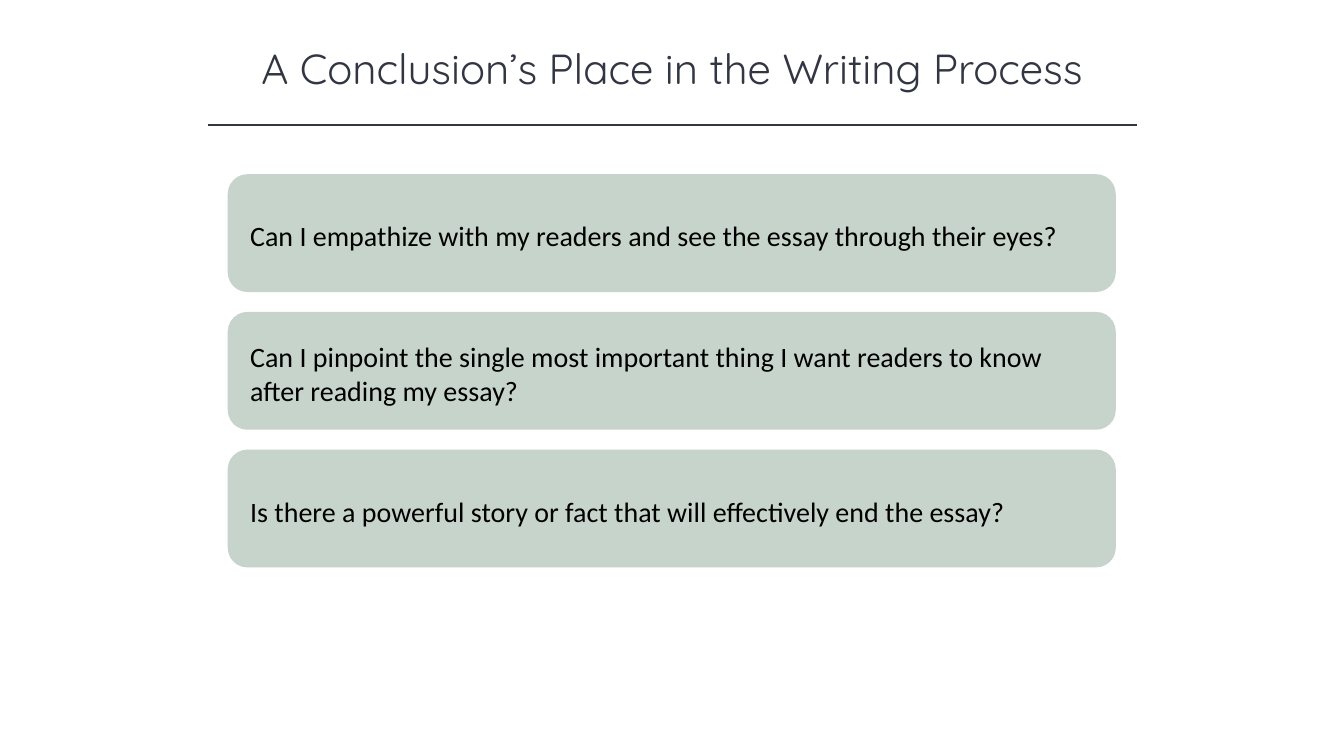
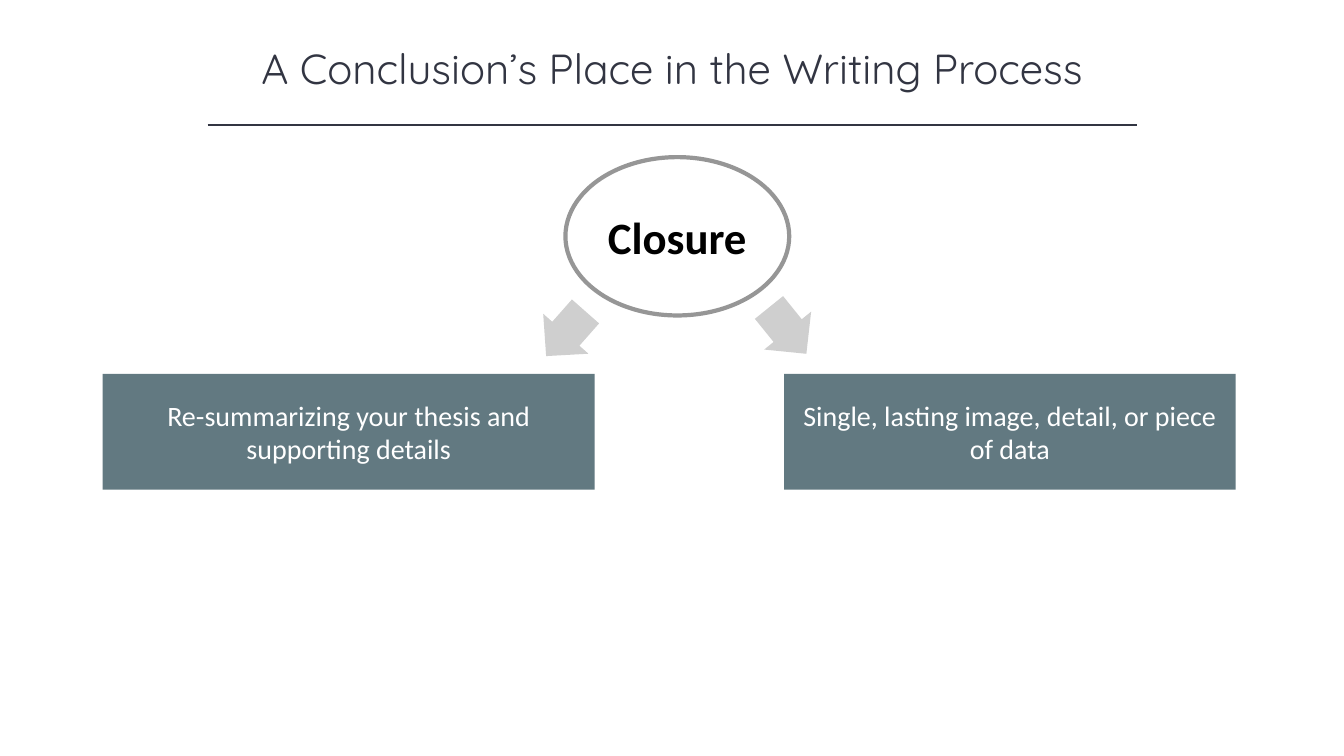
from dataclasses import dataclass

from lxml import etree
from pptx import Presentation
from pptx.dml.color import RGBColor
from pptx.enum.shapes import MSO_CONNECTOR, MSO_SHAPE
from pptx.enum.text import MSO_ANCHOR, PP_ALIGN
from pptx.oxml.ns import qn
from pptx.shapes.autoshape import Shape
from pptx.slide import Slide
from pptx.util import Cm, Pt

LINE = MSO_CONNECTOR.STRAIGHT
RECT = MSO_SHAPE.RECTANGLE
ROUND = MSO_SHAPE.ROUNDED_RECTANGLE
OVAL = MSO_SHAPE.OVAL
ARROW = MSO_SHAPE.LEFT_ARROW
MIDDLE = MSO_ANCHOR.MIDDLE
LEFT, CENTER = PP_ALIGN.LEFT, PP_ALIGN.CENTER

INK = RGBColor(0x32, 0x35, 0x42)
SAGE = RGBColor(0xC7, 0xD4, 0xCB)
SLATE = RGBColor(0x62, 0x79, 0x81)
GRAY = RGBColor(0x96, 0x96, 0x96)
SILVER = RGBColor(0xCF, 0xCF, 0xCF)
WHITE = RGBColor(0xFF, 0xFF, 0xFF)
BLACK = RGBColor(0x00, 0x00, 0x00)

TITLE = "A Conclusion’s Place in the Writing Process"
CARD_TOP, CARD_STEP = 4.39, 3.47
QUESTIONS = (
    "Can I empathize with my readers and see the essay through their eyes?",
    "Can I pinpoint the single most important thing I want readers to know "
    "after reading my essay?",
    "Is there a powerful story or fact that will effectively end the essay?",
)


@dataclass(frozen=True)
class Area:
    """A place on the slide, in centimetres."""
    left: float
    top: float
    width: float
    height: float


@dataclass(frozen=True)
class Style:
    font: str
    size: float
    color: RGBColor
    align: PP_ALIGN = CENTER
    bold: bool = False


@dataclass(frozen=True)
class Branch:
    text: str
    box: Area
    arrow: Area
    turn: float


HEAD = Style("Quicksand", 30, INK)
ASK = Style("Calibri", 20, BLACK, LEFT)
HUB = Style("Calibri", 32, BLACK, bold=True)
LABEL = Style("Calibri", 20, WHITE)

BRANCHES = (
    Branch("Re-summarizing your thesis and supporting details",
           Area(2.59, 9.42, 12.4, 2.92), Area(13.51, 7.65, 1.5, 1.52), 311.4),
    Branch("Single, lasting image, detail, or piece of data",
           Area(19.76, 9.42, 11.38, 2.92), Area(19.1, 7.57, 1.5, 1.52), 231.1),
)


def place(area: Area) -> tuple[Cm, Cm, Cm, Cm]:
    return Cm(area.left), Cm(area.top), Cm(area.width), Cm(area.height)


def write(shape: Shape, text: str, style: Style,
          side: float = 0.25, top: float = 0.13) -> None:
    """Fill a shape with one styled paragraph; insets in centimetres."""
    frame = shape.text_frame
    frame.word_wrap = True
    frame.vertical_anchor = MIDDLE
    frame.margin_left = frame.margin_right = Cm(side)
    frame.margin_top, frame.margin_bottom = Cm(top), Cm(0.13)
    para = frame.paragraphs[0]
    para.text = text
    para.alignment = style.align
    para.font.name = style.font
    para.font.size = Pt(style.size)
    para.font.bold = style.bold
    para.font.color.rgb = style.color


def draw(slide: Slide, kind: MSO_SHAPE, area: Area, fill: RGBColor) -> Shape:
    """Add a flat shape without an outline."""
    shape = slide.shapes.add_shape(kind, *place(area))
    shape.shadow.inherit = False
    shape.fill.solid()
    shape.fill.fore_color.rgb = fill
    shape.line.fill.background()
    return shape


def start(deck: Presentation) -> Slide:
    """Add a slide with the shared title and rule."""
    slide = deck.slides.add_slide(deck.slide_layouts[6])
    title = slide.shapes.add_textbox(*place(Area(4.24, 0.94, 25.4, 1.55)))
    write(title, TITLE, HEAD)
    rule = slide.shapes.add_connector(
        LINE, Cm(5.23), Cm(3.15), Cm(28.65), Cm(3.15))
    rule.line.color.rgb = INK
    rule.line.width = Pt(1)
    etree.SubElement(rule.element.spPr, qn("a:effectLst"))
    return slide


def ask(deck: Presentation) -> None:
    """Build the slide of question cards."""
    slide = start(deck)
    for row, text in enumerate(QUESTIONS):
        area = Area(5.74, CARD_TOP + row * CARD_STEP, 22.38, 2.97)
        card = draw(slide, ROUND, area, SAGE)
        write(card, text, ASK, side=0.42, top=0.25)


def close(deck: Presentation) -> None:
    """Build the slide on the two ways to closure."""
    slide = start(deck)
    for branch in BRANCHES:
        box = draw(slide, RECT, branch.box, SLATE)
        write(box, branch.text, LABEL, side=0.38)
    hub = draw(slide, OVAL, Area(14.25, 3.96, 5.64, 3.99), WHITE)
    hub.line.color.rgb = GRAY
    hub.line.width = Pt(3)
    write(hub, "Closure", HUB, side=0.05)
    for branch in BRANCHES:
        arrow = draw(slide, ARROW, branch.arrow, SILVER)
        arrow.adjustments[0] = 0.6
        arrow.adjustments[1] = 0.5
        arrow.rotation = branch.turn


def main() -> None:
    deck = Presentation()
    deck.slide_width, deck.slide_height = Cm(33.87), Cm(19.05)
    ask(deck)
    close(deck)
    deck.save("out.pptx")


if __name__ == "__main__":
    main()
